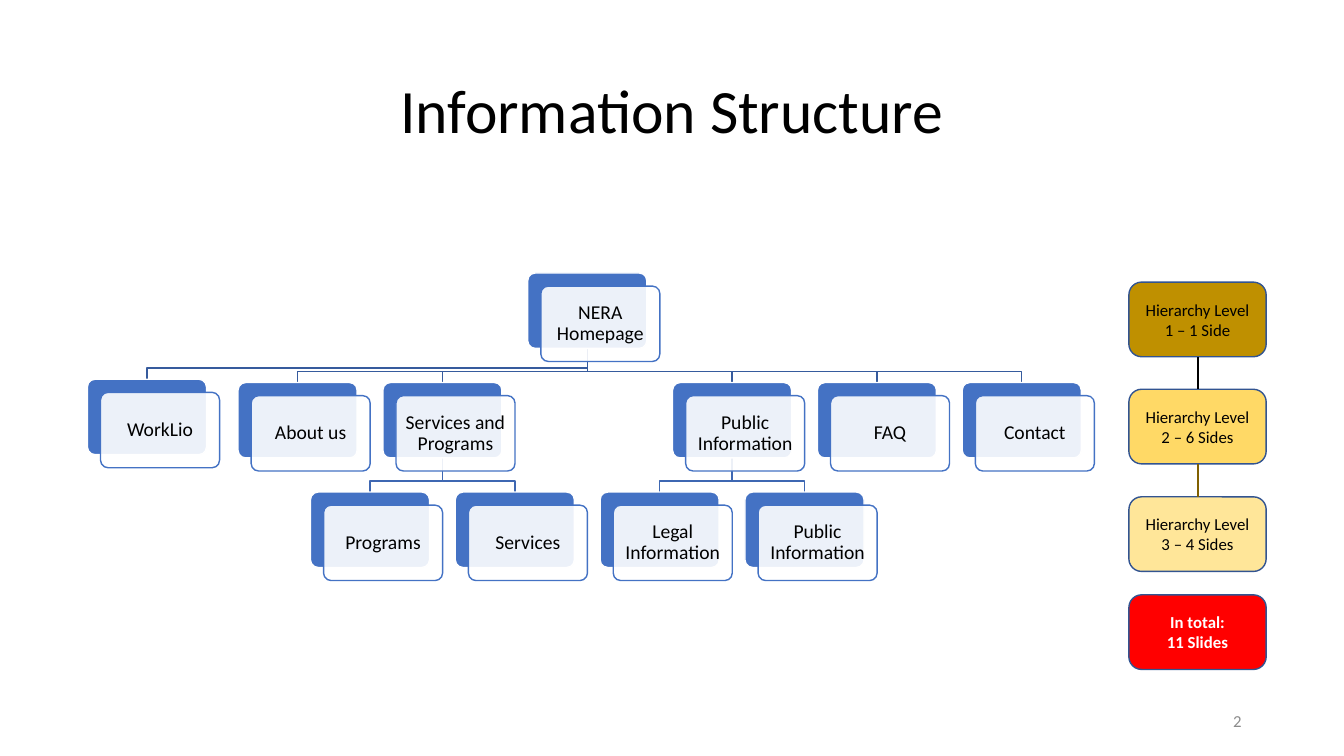
from lxml.etree import SubElement
from pptx import Presentation
from pptx.dml.color import RGBColor
from pptx.enum.shapes import MSO_CONNECTOR, MSO_SHAPE
from pptx.enum.text import MSO_ANCHOR, PP_ALIGN
from pptx.oxml.ns import qn
from pptx.util import Cm, Pt

# Content
TITLE = "Information Structure"
PAGE = "2"
# key: (label, column, row, parent key)
NODES = {
    "home": ("NERA Homepage", 2, 0, None),
    "work": ("WorkLio", -1.04, 0.97, "home"),
    "about": ("About us", 0, 1, "home"),
    "offer": ("Services and Programs", 1, 1, "home"),
    "programs": ("Programs", 0.5, 2, "offer"),
    "services": ("Services", 1.5, 2, "offer"),
    "public": ("Public Information", 3, 1, "home"),
    "legal": ("Legal Information", 2.5, 2, "public"),
    "info": ("Public Information", 3.5, 2, "public"),
    "faq": ("FAQ", 4, 1, "home"),
    "contact": ("Contact", 5, 1, "home"),
}
# (paragraphs, top in cm, fill, text style)
LEGEND = [
    (["Hierarchy Level 1 – 1 Side"], 7.11, "level1", "legend"),
    (["Hierarchy Level 2 – 6 Sides"], 9.81, "level2", "legend"),
    (["Hierarchy Level 3 – 4 Sides"], 12.52, "level3", "legend"),
    (["In total:", "11 Slides"], 14.99, "total", "total"),
]
LEGEND_LINKS = [(0, 1, "black"), (1, 2, "brown")]

COLORS = {
    "black": "000000", "white": "FFFFFF", "gray": "8C8C8C", "blue": "4472C4",
    "branch1": "365B9D", "branch2": "3E67B2", "outline": "325491",
    "level1": "BF9000", "level2": "FFD966", "level3": "FFE699",
    "total": "FF0000", "brown": "806000",
}
STYLES = {
    "title": ({"size": Pt(44)}, "black", {"alignment": PP_ALIGN.CENTER, "line_spacing": 0.9}),
    "node": ({"size": Pt(14)}, "black", {"alignment": PP_ALIGN.CENTER, "line_spacing": 0.9}),
    "legend": ({"size": Pt(12)}, "black", {"alignment": PP_ALIGN.CENTER}),
    "total": ({"size": Pt(12), "bold": True}, "white", {"alignment": PP_ALIGN.CENTER}),
    "page": ({"size": Pt(12)}, "gray", {"alignment": PP_ALIGN.RIGHT}),
}

# Layout, in cm
TREE_X, TREE_Y, COL_STEP, ROW_STEP = 6.0, 6.88, 3.65, 2.76
NODE_W, NODE_H, OFFSET, BEND = 3.0, 1.9, 0.33, 0.28
LEGEND_X, LEGEND_W, LEGEND_H = 28.45, 3.46, 1.88


def rgb(name):
    return RGBColor.from_string(COLORS[name])


def set_attrs(obj, values):
    for name, value in values.items():
        setattr(obj, name, value)


def set_line(s, color, width=1):
    s.line.color.rgb = rgb(color)
    s.line.width = Pt(width)


def write(s, paragraphs, style, **frame):
    font, color, para = STYLES[style]
    tf = s.text_frame
    set_attrs(tf, {"word_wrap": True, "vertical_anchor": MSO_ANCHOR.MIDDLE, **frame})
    for i, text in enumerate(paragraphs):
        p = tf.add_paragraph() if i else tf.paragraphs[0]
        set_attrs(p, para)
        r = p.add_run()
        r.text = text
        set_attrs(r.font, {"name": "Calibri", **font})
        r.font.color.rgb = rgb(color)


def add_text(sp, box, text, style):
    write(sp.add_textbox(*map(Cm, box)), [text], style)


def add_box(sp, box, fill, line, radius):
    s = sp.add_shape(MSO_SHAPE.ROUNDED_RECTANGLE, *map(Cm, box))
    s.adjustments[0] = radius
    s.shadow.inherit = False
    s.fill.solid()
    s.fill.fore_color.rgb = rgb(fill)
    set_line(s, line)
    return s


def corner(key):
    _, col, row, _ = NODES[key]
    return TREE_X + col * COL_STEP, TREE_Y + row * ROW_STEP


def add_branch(sp, parent, child):
    (px, py), (cx, cy) = corner(parent), corner(child)
    px, cx = px + NODE_W / 2, cx + NODE_W / 2
    points = [(px, py + NODE_H), (px, cy - BEND), (cx, cy - BEND), (cx, cy)]
    start, *rest = [(Cm(x), Cm(y)) for x, y in points]
    builder = sp.build_freeform(*start)
    builder.add_line_segments(rest, close=False)
    s = builder.convert_to_shape()
    s.shadow.inherit = False
    s.fill.background()
    set_line(s, "branch1" if parent == "home" else "branch2")


def add_node(sp, key):
    x, y = corner(key)
    add_box(sp, (x, y, NODE_W, NODE_H), "blue", "white", 0.1)
    s = add_box(sp, (x + OFFSET, y + OFFSET, NODE_W, NODE_H), "white", "blue", 0.1)
    srgb = s.fill._xPr.find(qn("a:solidFill"))[0]
    SubElement(srgb, qn("a:alpha"), val="90000")
    inset = Cm(0.15)
    write(s, [NODES[key][0]], "node", margin_left=inset, margin_right=inset,
          margin_top=inset, margin_bottom=inset)


def main():
    prs = Presentation()
    prs.slide_width, prs.slide_height = Cm(33.87), Cm(19.05)
    sp = prs.slides.add_slide(prs.slide_layouts[6]).shapes

    add_text(sp, (2.33, 1.01, 29.21, 3.68), TITLE, "title")

    # Site tree: branches behind the nodes
    for key, (_, _, _, parent) in NODES.items():
        if parent:
            add_branch(sp, parent, key)
    for key in NODES:
        add_node(sp, key)

    # Legend of hierarchy levels
    boxes = []
    for paragraphs, top, fill, style in LEGEND:
        s = add_box(sp, (LEGEND_X, top, LEGEND_W, LEGEND_H), fill, "outline", 0.17)
        write(s, paragraphs, style)
        boxes.append(s)
    for upper, lower, color in LEGEND_LINKS:
        link = sp.add_connector(MSO_CONNECTOR.STRAIGHT, 0, 0, 0, 0)
        link.begin_connect(boxes[upper], 2)
        link.end_connect(boxes[lower], 0)
        set_line(link, color, 1.5)
        SubElement(link._element.spPr, qn("a:effectLst"))

    # Slide number
    add_text(sp, (23.92, 17.66, 7.62, 1.01), PAGE, "page")
    prs.save("out.pptx")


if __name__ == "__main__":
    main()
